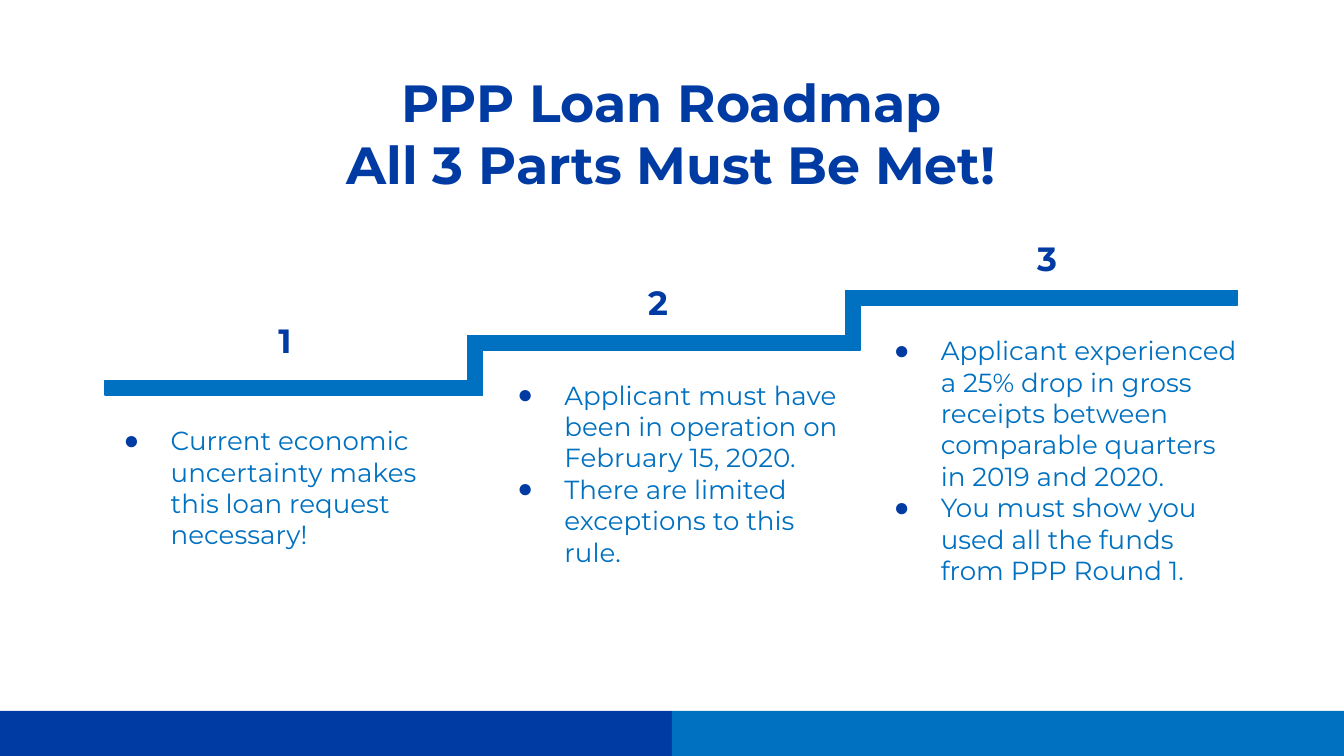
from lxml import etree
from pptx import Presentation
from pptx.dml.color import RGBColor
from pptx.enum.shapes import MSO_SHAPE
from pptx.enum.text import MSO_ANCHOR, MSO_AUTO_SIZE, PP_ALIGN
from pptx.oxml.ns import qn
from pptx.util import Inches, Pt

RECTANGLE = MSO_SHAPE.RECTANGLE
TOP = MSO_ANCHOR.TOP
NO_FIT = MSO_AUTO_SIZE.NONE
CENTER, LEFT = PP_ALIGN.CENTER, PP_ALIGN.LEFT
COMPARISON_LAYOUT = 4

FONT = "Montserrat"
NAVY, BLUE = "003BA3", "0070C0"

TITLE = "PPP Loan Roadmap\vAll 3 Parts Must Be Met!"
# number, its box, list box, list items
STEPS = [
    (" 1", (1.24, 2.28, 1.69, 0.45), (0.67, 3.06, 2.81, 1.57),
     ["Current economic uncertainty makes this loan request necessary!"]),
    (" 2", (4.02, 2.0, 1.68, 0.45), (3.6, 2.72, 2.81, 1.57),
     ["Applicant must have been in operation on February 15, 2020.",
      "There are limited exceptions to this rule."]),
    (" 3", (6.91, 1.67, 1.69, 0.45), (6.4, 2.39, 2.94, 2.24),
     ["Applicant experienced a 25% drop in gross receipts between "
      "comparable quarters in 2019 and 2020.",
      "You must show you used all the funds from PPP Round 1."]),
]

PAGE_WIDTH = Inches(10)
PAGE_HEIGHT = PAGE_WIDTH * 9 // 16
STAIR_LEFT, STAIR_TOP = 0.78, 2.83
TREAD, THICKNESS = 2.81, 0.11
RISE = 0.67 / 2
FOOTER_TOP, FOOTER_HEIGHT = 5.29, 0.34


def color(hex_text):
    return RGBColor.from_string(hex_text)


def place(shape, bounds):
    shape.left, shape.top, shape.width, shape.height = map(Inches, bounds)


def write(box, lines, size, hex_text, bold, align, space_after=0):
    """Fill a text shape, one paragraph per line, in a single style."""
    frame = box.text_frame
    frame.text = "\n".join(lines)
    frame.word_wrap = True
    frame.auto_size = NO_FIT
    frame.vertical_anchor = TOP
    frame.margin_left = frame.margin_right = Inches(0.1)
    frame.margin_top = frame.margin_bottom = Inches(0.1)
    for para in frame.paragraphs:
        para.alignment = align
        para.line_spacing = 1.0
        para.space_before = Pt(0)
        para.space_after = Pt(space_after)
        for span in para.runs:
            span.font.name = FONT
            span.font.size = Pt(size)
            span.font.bold = bold
            span.font.color.rgb = color(hex_text)


def add_bullet(para):
    properties = para._p.get_or_add_pPr()
    properties.set("marL", str(Inches(0.5)))
    properties.set("indent", str(Inches(-0.35)))
    bullet_color = etree.SubElement(properties, qn("a:buClr"))
    etree.SubElement(bullet_color, qn("a:srgbClr")).set("val", NAVY)
    etree.SubElement(properties, qn("a:buChar")).set("char", "●")


def add_bar(page, bounds, hex_text, outlined=True):
    bar = page.shapes.add_shape(RECTANGLE, *map(Inches, bounds))
    bar.shadow.inherit = False
    bar.fill.solid()
    bar.fill.fore_color.rgb = color(hex_text)
    if outlined:
        bar.line.color.rgb = color(hex_text)
        bar.line.width = Pt(0.75)
    else:
        bar.line.fill.background()


deck = Presentation()
deck.slide_width, deck.slide_height = PAGE_WIDTH, PAGE_HEIGHT
page = deck.slides.add_slide(deck.slide_layouts[COMPARISON_LAYOUT])

title, *bodies = list(page.placeholders)
place(title, (0.78, 0.42, 8.43, 1.02))
write(title, [TITLE], 28, NAVY, True, CENTER)

for (number, number_bounds, list_bounds, items), body in zip(STEPS, bodies):
    number_box = page.shapes.add_textbox(*map(Inches, number_bounds))
    write(number_box, [number], 18, NAVY, True, CENTER, space_after=16)
    place(body, list_bounds)
    write(body, items, 14, BLUE, False, LEFT)
    for para in body.text_frame.paragraphs:
        add_bullet(para)

for spare in bodies[len(STEPS):]:
    spare.element.getparent().remove(spare.element)

for index in range(len(STEPS)):
    left = STAIR_LEFT + index * TREAD
    top = STAIR_TOP - index * RISE
    add_bar(page, (left, top, TREAD, THICKNESS), BLUE)
    if index:
        riser_left = left - THICKNESS
        add_bar(page, (riser_left, top, THICKNESS, RISE + THICKNESS), BLUE)

for index, hex_text in enumerate((NAVY, BLUE)):
    add_bar(page, (index * 5, FOOTER_TOP, 5, FOOTER_HEIGHT), hex_text, outlined=False)

deck.save("out.pptx")
